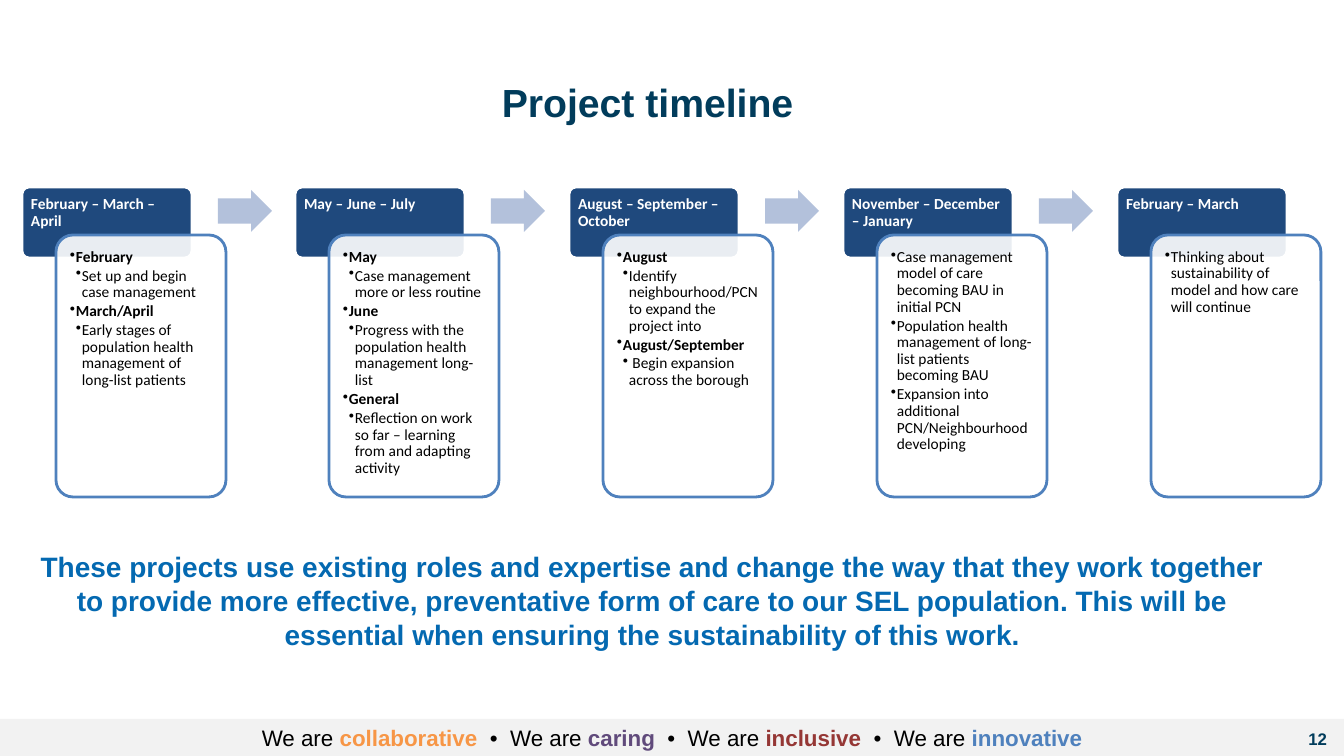
from lxml import etree
from pptx import Presentation
from pptx.dml.color import RGBColor
from pptx.enum.shapes import MSO_SHAPE
from pptx.enum.text import MSO_ANCHOR, PP_ALIGN
from pptx.oxml.ns import qn
from pptx.util import Emu, Pt

RECT = MSO_SHAPE.RECTANGLE
ROUND = MSO_SHAPE.ROUNDED_RECTANGLE
ARROW = MSO_SHAPE.RIGHT_ARROW
TOP, MIDDLE = MSO_ANCHOR.TOP, MSO_ANCHOR.MIDDLE
LEFT, CENTER, RIGHT = PP_ALIGN.LEFT, PP_ALIGN.CENTER, PP_ALIGN.RIGHT

SCALE = 914400 / 100.8
STAGE_LEFT = 22
STAGE_SPAN = 1095
COLORS = {
    "white": "FFFFFF", "black": "000000", "bar": "F2F2F2", "title": "013C5B",
    "period": "1F497D", "outline": "4F81BD", "arrow": "B3C1DB", "message": "0469B1",
    "orange": "F79646", "purple": "604A7B", "red": "953735",
}
VALUES = [("collaborative", "orange"), ("caring", "purple"),
          ("inclusive", "red"), ("innovative", "outline")]
STAGES = [
    ("February – March – April", [
        ("February", "Set up and begin case management"),
        ("March/April", "Early stages of population health management of long-list patients"),
    ]),
    ("May – June – July", [
        ("May", "Case management more or less routine"),
        ("June", "Progress with the population health management long-list"),
        ("General", "Reflection on work so far – learning from and adapting activity"),
    ]),
    ("August – September – October", [
        ("August", "Identify neighbourhood/PCN to expand the project into"),
        ("August/September", " Begin expansion across the borough"),
    ]),
    ("November – December – January", [
        (None, "Case management model of care becoming BAU in initial PCN"),
        (None, "Population health management of long-list patients becoming BAU"),
        (None, "Expansion into additional PCN/Neighbourhood developing"),
    ]),
    ("February – March", [
        (None, "Thinking about sustainability of model and how care will continue"),
    ]),
]
MESSAGE = ("These projects use existing roles and expertise and change the way that they work "
           "together to provide more effective, preventative form of care to our SEL population. "
           "This will be essential when ensuring the sustainability of this work.")


def px(n):
    return Emu(round(n * SCALE))


def color(name):
    return RGBColor.from_string(COLORS[name])


def style(font, size, name, bold=False, face="Arial"):
    font.size = Pt(size)
    font.name = face
    font.bold = bold
    font.color.rgb = color(name)


def set_frame(tf, anchor=TOP, inset=(10, 5, 10, 5)):
    tf.word_wrap = True
    tf.vertical_anchor = anchor
    tf.margin_left, tf.margin_top, tf.margin_right, tf.margin_bottom = map(px, inset)


def add_shape(s, kind, box, fill, outline=None, adjust=()):
    sp = s.shapes.add_shape(kind, *map(px, box))
    sp.shadow.inherit = False
    sp.fill.solid()
    sp.fill.fore_color.rgb = color(fill)
    if outline:
        sp.line.color.rgb = color(outline)
        sp.line.width = Pt(2)
    else:
        sp.line.fill.background()
    for i, value in enumerate(adjust):
        sp.adjustments[i] = value
    return sp


def add_text(s, box, text, size, name, align, anchor=TOP):
    tf = s.shapes.add_textbox(*map(px, box)).text_frame
    set_frame(tf, anchor)
    tf.text = text
    p = tf.paragraphs[0]
    p.alignment = align
    style(p.runs[0].font, size, name, True)


def add_bullet(p, level):
    p.level = level
    pPr = p._p.get_or_add_pPr()
    pPr.set("marL", str(px(6 * level)))
    pPr.set("indent", str(-px(6)))
    etree.SubElement(pPr, qn("a:buChar")).set("char", "•")


def add_period(s, x, period):
    sp = add_shape(s, ROUND, (x, 187, 170, 71), "period", "white", (0.1,))
    tf = sp.text_frame
    set_frame(tf, inset=(7, 7, 7, 5))
    tf.text = period
    p = tf.paragraphs[0]
    p.alignment = LEFT
    p.line_spacing = 0.9
    style(p.runs[0].font, 11, "white", True, "Calibri")


def add_activities(s, x, activities):
    sp = add_shape(s, ROUND, (x + 34, 235, 170, 262), "white", "outline", (0.1,))
    rgb = sp.fill._xPr.find(qn("a:solidFill")).find(qn("a:srgbClr"))
    etree.SubElement(rgb, qn("a:alpha")).set("val", "90000")
    tf = sp.text_frame
    set_frame(tf, inset=(9, 9, 9, 9))
    lines = []
    for heading, detail in activities:
        if heading:
            lines.append((1, heading, True))
        lines.append((2 if heading else 1, detail, False))
    tf.text = "\n".join(text for _, text, _ in lines)
    for p, (level, _, bold) in zip(tf.paragraphs, lines):
        p.alignment = LEFT
        p.line_spacing = 0.9
        p.space_after = Pt(1.65)
        add_bullet(p, level)
        style(p.runs[0].font, 11, "black", bold, "Calibri")


def add_run(p, text, name, bold=False):
    r = p.add_run()
    r.text = text
    style(r.font, 16, name, bold)
    return r


def add_footer(s):
    tf = add_shape(s, RECT, (0, 719, 1344, 37), "bar").text_frame
    set_frame(tf)
    p = tf.paragraphs[0]
    p.alignment = CENTER
    p.space_after = Pt(6)
    for i, (value, name) in enumerate(VALUES):
        if i:
            dot = add_run(p, " •", "black")
            dot.font._element.set("spc", "445")
        add_run(p, " We are " if i else "We are ", "black")
        add_run(p, value, name, True)


def main():
    prs = Presentation()
    prs.slide_width, prs.slide_height = px(1344), px(756)
    s = prs.slides.add_slide(prs.slide_layouts[6])
    add_footer(s)
    add_text(s, (238, 65, 830, 73), "Project timeline ", 28, "title", CENTER, MIDDLE)
    last = len(STAGES) - 1
    for i, (period, activities) in enumerate(STAGES):
        x = STAGE_LEFT + STAGE_SPAN * i // last
        add_period(s, x, period)
        add_activities(s, x, activities)
        if i < last:
            add_shape(s, ARROW, (x + 196, 190, 54, 42), "arrow", adjust=(0.6, 0.5))
    add_text(s, (28, 545, 1249, 112), MESSAGE, 20, "message", CENTER)
    add_text(s, (1151, 719, 186, 40), "12", 12, "title", RIGHT, MIDDLE)
    prs.save("out.pptx")


if __name__ == "__main__":
    main()
